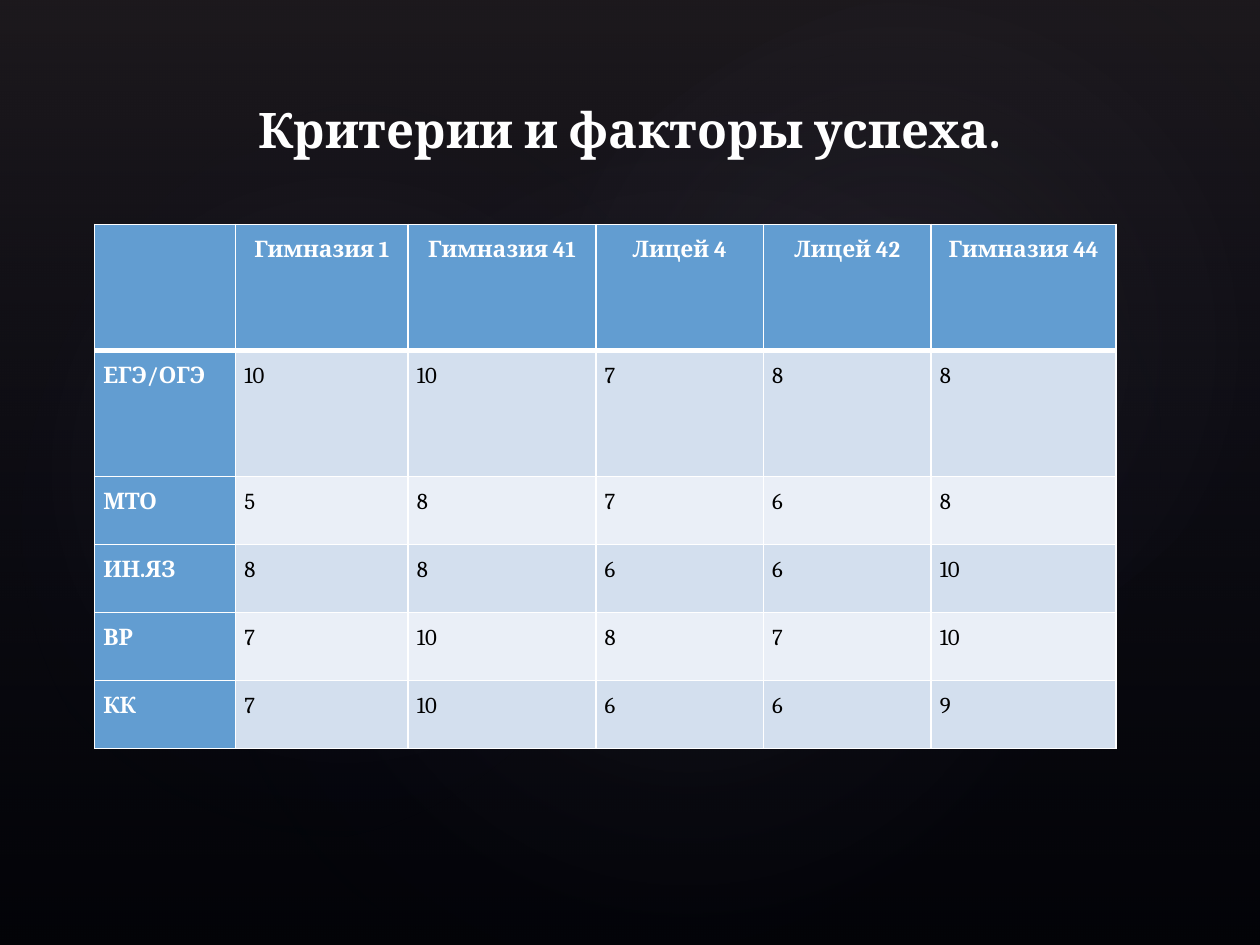
from lxml import etree
from pptx import Presentation
from pptx import util as u
from pptx.dml.color import RGBColor
from pptx.enum import shapes, text
from pptx.oxml import parse_xml
from pptx.oxml.ns import nsdecls, qn

COLORS = {
    "black": "000000", "white": "FFFFFF", "header": "629DD1",
    "odd": "D3DFEE", "even": "EAEFF7",
    "dusk": "504652", "navy": "242852", "glow": "C4BCC6",
}
FONT = "Cambria"


def add_backdrop(kind, box, stops, direction, rotation=0):
    backdrop = slide.shapes.add_shape(kind, *map(u.Inches, box))
    backdrop.rotation = rotation
    backdrop.shadow.inherit = False
    backdrop.line.fill.background()
    stop_xml = "".join(
        f'<a:gs pos="{pos * 1000}"><a:srgbClr val="{COLORS[name]}">'
        f'<a:alpha val="{alpha * 1000}"/></a:srgbClr></a:gs>'
        for pos, name, alpha in stops)
    gradient = parse_xml(
        f'<a:gradFill {nsdecls("a")} rotWithShape="1">'
        f'<a:gsLst>{stop_xml}</a:gsLst>{direction}</a:gradFill>')
    backdrop.element.spPr.find(qn("a:prstGeom")).addnext(gradient)


def add_run(paragraph, wording, size, color, bold):
    run = paragraph.add_run()
    run.text = wording
    run.font.name = FONT
    run.font.size = u.Pt(size)
    run.font.bold = bold
    run.font.color.rgb = RGBColor.from_string(COLORS[color])


prs = Presentation()
prs.slide_width, prs.slide_height = u.Inches(10), u.Inches(7.5)
slide = prs.slides.add_slide(prs.slide_layouts[5])
slide.background.fill.solid()
slide.background.fill.fore_color.rgb = RGBColor.from_string(COLORS["black"])

add_backdrop(shapes.MSO_SHAPE.RECTANGLE, (0, 0, 10, 7.5),
             [(0, "dusk", 36), (100, "navy", 10)],
             '<a:lin ang="5400000" scaled="0"/>')
radial = ('<a:path path="circle">'
          '<a:fillToRect l="50000" t="50000" r="50000" b="50000"/></a:path>')
for box, rotation, alpha in [
    ((1.5, 1.14, 7.92, 6.24), 328.7, 7),
    ((-0.3, 1.28, 6.06, 4.9), 294.3, 8),
    ((3.58, 0.13, 7.09, 5.2), 328.7, 8),
]:
    add_backdrop(shapes.MSO_SHAPE.OVAL, box,
                 [(0, "glow", alpha), (58, "navy", 0)], radial, rotation)

title = slide.shapes.title
slide.shapes.element.append(title.element)
title.left, title.top = u.Inches(0.43), u.Inches(0.52)
title.width, title.height = u.Inches(9.13), u.Inches(0.79)
title.text_frame.vertical_anchor = text.MSO_ANCHOR.BOTTOM
heading = title.text_frame.paragraphs[0]
heading.alignment = text.PP_ALIGN.CENTER
add_run(heading, "Критерии и факторы успеха.", 28, "white", True)

scores = [
    ["", "Гимназия 1", "Гимназия 41", "Лицей 4", "Лицей 42", "Гимназия 44"],
    ["ЕГЭ/ОГЭ", "10", "10", "7", "8", "8"],
    ["МТО", "5", "8", "7", "6", "8"],
    ["ИН.ЯЗ", "8", "8", "6", "6", "10"],
    ["ВР", "7", "10", "8", "7", "10"],
    ["КК", "7", "10", "6", "6", "9"],
]
col_widths = [1.12, 1.37, 1.49, 1.33, 1.33, 1.47]
row_heights = [1, 1] + [0.54] * 4
table = slide.shapes.add_table(
    len(scores), len(col_widths), u.Inches(0.75), u.Inches(1.78),
    u.Inches(sum(col_widths)), u.Inches(sum(row_heights))).table
table.first_col = True
for column, width in zip(table.columns, col_widths):
    column.width = u.Inches(width)
for row, height in zip(table.rows, row_heights):
    row.height = u.Inches(height)

for r, row_scores in enumerate(scores):
    for c, wording in enumerate(row_scores):
        cell = table.cell(r, c)
        is_label = r == 0 or c == 0
        cell.margin_left = cell.margin_right = u.Inches(0.07)
        cell.margin_top = cell.margin_bottom = 0
        properties = cell._tc.get_or_add_tcPr()
        for side in "LRTB":
            thick = (r, side) in [(0, "B"), (1, "T")]
            border = etree.SubElement(properties, qn(f"a:ln{side}"),
                                      w=str(u.Pt(3 if thick else 1)))
            line_fill = etree.SubElement(border, qn("a:solidFill"))
            etree.SubElement(line_fill, qn("a:srgbClr"), val=COLORS["white"])
        cell.fill.solid()
        fill = "header" if is_label else "odd" if r % 2 else "even"
        cell.fill.fore_color.rgb = RGBColor.from_string(COLORS[fill])
        if wording:
            paragraph = cell.text_frame.paragraphs[0]
            paragraph.line_spacing = 1.5
            if r == 0:
                paragraph.alignment = text.PP_ALIGN.CENTER
            add_run(paragraph, wording, 13,
                    "white" if is_label else "black", is_label)

prs.save("out.pptx")
